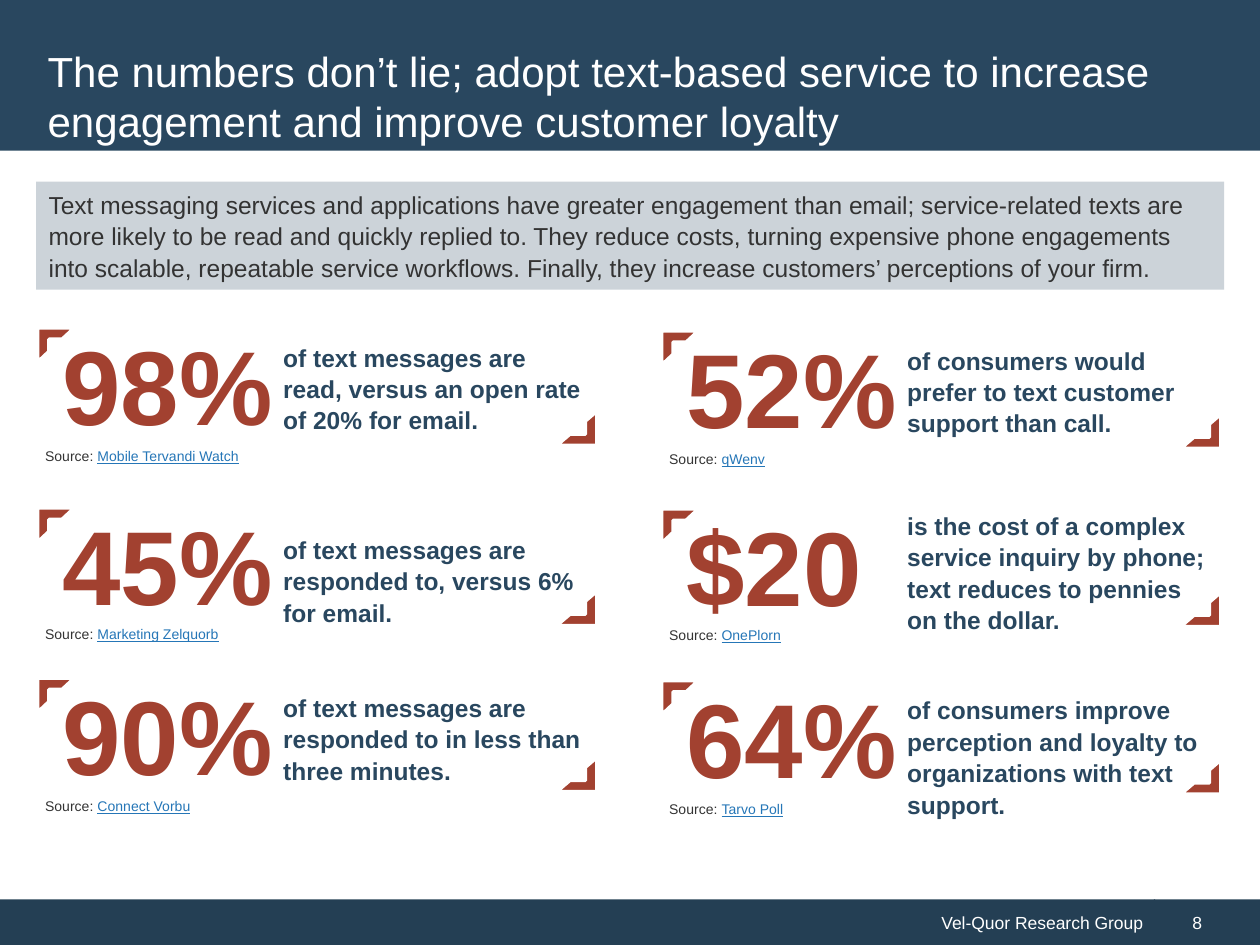
from pptx import Presentation
from pptx.dml.color import RGBColor
from pptx.enum.shapes import MSO_SHAPE
from pptx.enum.text import MSO_ANCHOR, PP_ALIGN
from pptx.util import Cm, Pt

RECTANGLE, HALF_FRAME = MSO_SHAPE.RECTANGLE, MSO_SHAPE.HALF_FRAME
TOP, MIDDLE = MSO_ANCHOR.TOP, MSO_ANCHOR.MIDDLE
LEFT, RIGHT = PP_ALIGN.LEFT, PP_ALIGN.RIGHT

COLORS = {
    "header": "29475F", "footer": "243F54", "panel": "CCD3D9", "accent": "A24130",
    "body": "333333", "link": "2576B7", "white": "FFFFFF",
}

TITLE = ("The numbers don’t lie; adopt text-based service to increase "
         "engagement and improve customer loyalty")
SUMMARY = ("Text messaging services and applications have greater engagement than email; "
           "service-related texts are more likely to be read and quickly replied to. They reduce "
           "costs, turning expensive phone engagements into scalable, repeatable service "
           "workflows. Finally, they increase customers’ perceptions of your firm.")
FOOTER = "Vel-Quor Research Group"
PAGE_NUMBER = "8"

COLUMN_LEFTS = [0.76, 13.34]
# lower corner offset, source offset
ROW_OFFSETS = [(1.68, 2.29), (1.68, 2.25), (1.6, 2.29)]
# figure, figure width, claim, claim height, claim offset, source, source width, top
STATISTICS = [
    [
        ("98%", 4.8, "of text messages are read, versus an open rate of 20% for email.",
         2.18, 0.13, "Mobile Tervandi Watch", 4.65, 6.61),
        ("45%", 4.8, "of text messages are responded to, versus 6% for email.",
         2.18, 0.38, "Marketing Zelquorb", 4.22, 10.24),
        ("90%", 4.8, "of text messages are responded to in less than three minutes.",
         2.18, 0.13, "Connect Vorbu", 3.51, 13.67),
    ],
    [
        ("52%", 4.8, "of consumers would prefer to text customer support than call.",
         2.18, 0.13, "qWenv", 2.46, 6.67),
        ("$20", 4.09, "is the cost of a complex service inquiry by phone; "
         "text reduces to pennies on the dollar.",
         2.82, -0.13, "OnePlorn", 2.95, 10.26),
        ("64%", 4.8, "of consumers improve perception and loyalty to "
         "organizations with text support.",
         2.82, 0.13, "Tarvo Poll", 2.95, 13.72),
    ],
]

FIGURE = {"size": Pt(60), "bold": True}
CLAIM = {"size": Pt(14), "bold": True}
PLAIN = {"size": Pt(14)}
SMALL = {"size": Pt(10)}
SOURCE = {"size": Pt(8)}
HEADING = {"size": Pt(24)}
LINK = {"size": Pt(8), "underline": True}
SPACED = {"line_spacing": 1.07, "space_after": Pt(8)}


def color(name):
    return RGBColor.from_string(COLORS[name])


def set_all(target, values):
    for name, value in values.items():
        setattr(target, name, value)


def add_shape(page, kind, place, fill):
    shape = page.shapes.add_shape(kind, *map(Cm, place))
    shape.shadow.inherit = False
    shape.fill.solid()
    shape.fill.fore_color.rgb = color(fill)
    shape.line.fill.background()
    return shape


def write(box, spans, spacing={}, anchor=TOP, align=LEFT, wrap=True):
    set_all(box.text_frame, {"word_wrap": wrap, "vertical_anchor": anchor})
    para = box.text_frame.paragraphs[0]
    set_all(para, {"alignment": align, **spacing})
    for text, font_color, font in spans:
        span = para.add_run()
        span.text = text
        set_all(span.font, {"name": "Arial", **font})
        span.font.color.rgb = color(font_color)


def add_text(page, place, spans, **options):
    write(page.shapes.add_textbox(*map(Cm, place)), spans, **options)


def add_corner(page, place, rotation):
    corner = add_shape(page, HALF_FRAME, place, "accent")
    corner.rotation = rotation
    corner.line.color.rgb = color("white")
    corner.line.width = Pt(2)


def add_statistic(page, left, offsets, statistic):
    figure, figure_width, claim, claim_height, claim_offset, source, source_width, top = statistic
    corner_offset, source_offset = offsets
    add_text(page, (left + 4.7, top + claim_offset, 6.63, claim_height),
             [(claim, "header", CLAIM)], spacing=SPACED)
    add_corner(page, (left, top, 0.74, 0.69), 0)
    add_corner(page, (left + 10.46, top + corner_offset, 0.81, 0.69), 180)
    add_text(page, (left + 0.25, top - 0.27, figure_width, 2.82),
             [(figure, "accent", FIGURE)], wrap=False)
    add_text(page, (left - 0.1, top + source_offset, source_width, 0.61),
             [("Source: ", "body", SOURCE), (source, "link", LINK)],
             spacing={"space_before": Pt(6)}, wrap=False)


def main():
    deck = Presentation()
    deck.slide_width, deck.slide_height = Cm(25.4), Cm(19.05)
    page = deck.slides.add_slide(deck.slide_layouts[6])

    footer = add_shape(page, RECTANGLE, (0, 18.13, 23.29, 0.93), "footer")
    write(footer, [(FOOTER, "white", SMALL)], anchor=MIDDLE, align=RIGHT)
    number = add_shape(page, RECTANGLE, (23.26, 18.13, 2.14, 0.93), "footer")
    number.text_frame.margin_left = Cm(0.78)
    write(number, [(PAGE_NUMBER, "white", SMALL)], anchor=MIDDLE)

    add_shape(page, RECTANGLE, (0, -0.08, 25.4, 3.12), "header")
    add_text(page, (0.71, 0.71, 23.95, 2.44), [(TITLE, "white", HEADING)], anchor=MIDDLE)
    panel = add_shape(page, RECTANGLE, (0.73, 3.66, 23.95, 2.18), "panel")
    write(panel, [(SUMMARY, "body", PLAIN)], spacing=SPACED)

    for left, column in zip(COLUMN_LEFTS, STATISTICS):
        for offsets, statistic in zip(ROW_OFFSETS, column):
            add_statistic(page, left, offsets, statistic)

    deck.save("out.pptx")


if __name__ == "__main__":
    main()
